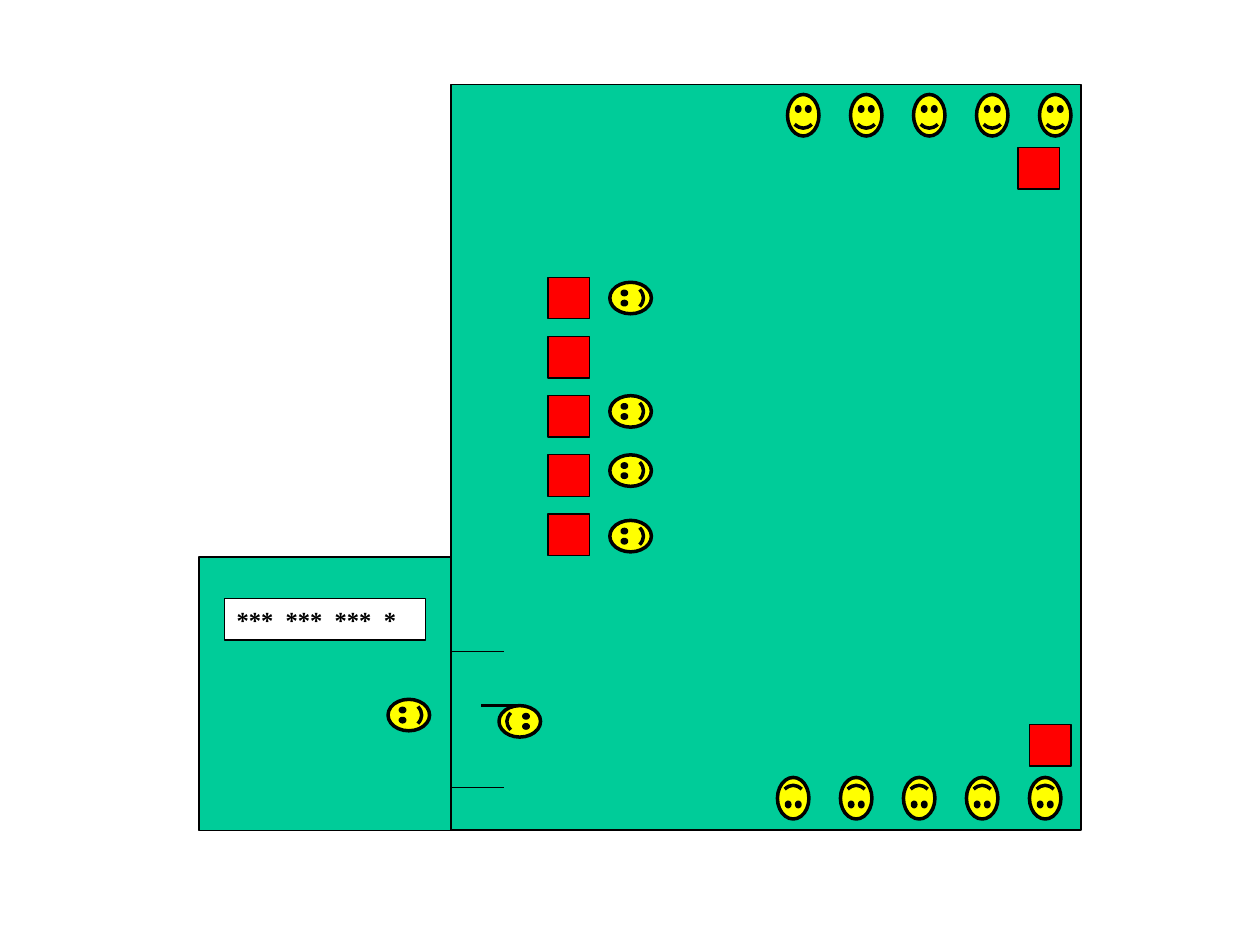
from pptx import Presentation
from pptx.dml.color import RGBColor
from pptx.enum.shapes import MSO_CONNECTOR, MSO_SHAPE
from pptx.enum.text import MSO_ANCHOR, PP_ALIGN
from pptx.oxml.ns import qn
from pptx.util import Inches, Pt
from lxml import etree

THEME = {
    "floor": "00CC99", "desk": "FF0000", "face": "FFFF00",
    "sign": "FFFFFF", "ink": "000000",
    "font": "Times New Roman", "sign_size": 14,
    "thin": 0.75, "wall": 1, "arm": 1.5, "bold": 2,
}

ROOMS = [(1.58, 4.42, 2, 2.17, THEME["thin"]), (3.58, 0.67, 5, 5.92, THEME["wall"])]
SIGN = ("***  ***  ***  *", (1.78, 4.75, 1.6, 0.33))
DESK_SIZE = (0.33, 0.33)
FACE_SIZE = (0.25, 0.33)
SMILE = 0.047

CORNER_DESKS = [(8.17, 5.75), (8.08, 1.17)]
DESK_COLUMN = {"left": 4.35, "top": 2.2, "step": 0.47, "count": 5}

QUEUES = [
    {"left": 6.17, "top": 6.17, "rotation": 180},
    {"left": 6.25, "top": 0.75, "rotation": 0},
]
QUEUE_STEP, QUEUE_COUNT = 0.5, 5
SEATED_LEFT, SEATED_TOPS = 4.88, [2.2, 3.1, 3.57, 4.09]
AT_DOOR = [(4, 5.56, 90), (3.12, 5.51, 270)]

DOOR_POSTS = [(3.58, y, 4, y) for y in (5.17, 6.25)]
ARM = (3.82, 5.6, 4.1, 5.6)


def colour(name):
    return RGBColor.from_string(THEME[name])


def add_block(slide, preset, box, fill, weight, rotation=0):
    block = slide.shapes.add_shape(preset, *map(Inches, box))
    block.shadow.inherit = False
    block.fill.solid()
    block.fill.fore_color.rgb = colour(fill)
    block.line.color.rgb = colour("ink")
    block.line.width = Pt(weight)
    block.rotation = rotation
    return block


def add_desk(slide, left, top):
    add_block(slide, MSO_SHAPE.RECTANGLE, (left, top, *DESK_SIZE), "desk", THEME["thin"])


def add_face(slide, left, top, rotation):
    face = add_block(slide, MSO_SHAPE.SMILEY_FACE, (left, top, *FACE_SIZE),
                     "face", THEME["bold"], rotation)
    face.adjustments[0] = SMILE


def add_stroke(slide, ends, weight):
    stroke = slide.shapes.add_connector(MSO_CONNECTOR.STRAIGHT, *map(Inches, ends))
    stroke.line.color.rgb = colour("ink")
    stroke.line.width = Pt(weight)
    etree.SubElement(stroke.element.spPr, qn("a:effectLst"))


def write(block, text, size, bold=False, align=PP_ALIGN.LEFT):
    frame = block.text_frame
    frame.word_wrap = True
    frame.vertical_anchor = MSO_ANCHOR.MIDDLE
    paragraph = frame.paragraphs[0]
    paragraph.alignment = align
    run = paragraph.add_run()
    run.text = text
    run.font.name = THEME["font"]
    run.font.size = Pt(size)
    run.font.bold = bold
    run.font.color.rgb = colour("ink")


def main():
    deck = Presentation()
    deck.slide_width, deck.slide_height = Inches(10), Inches(7.5)
    slide = deck.slides.add_slide(deck.slide_layouts[6])

    for *box, weight in ROOMS:
        add_block(slide, MSO_SHAPE.RECTANGLE, box, "floor", weight)

    for left, top in CORNER_DESKS:
        add_desk(slide, left, top)
    for row in range(DESK_COLUMN["count"]):
        add_desk(slide, DESK_COLUMN["left"], DESK_COLUMN["top"] + row * DESK_COLUMN["step"])

    for queue in QUEUES:
        for place in range(QUEUE_COUNT):
            add_face(slide, queue["left"] + place * QUEUE_STEP, queue["top"], queue["rotation"])
    for top in SEATED_TOPS:
        add_face(slide, SEATED_LEFT, top, 270)
    for left, top, rotation in AT_DOOR:
        add_face(slide, left, top, rotation)

    for post in DOOR_POSTS:
        add_stroke(slide, post, THEME["thin"])

    text, box = SIGN
    sign = add_block(slide, MSO_SHAPE.RECTANGLE, box, "sign", THEME["thin"])
    write(sign, text, THEME["sign_size"], bold=True)
    add_stroke(slide, ARM, THEME["arm"])

    deck.save("out.pptx")


if __name__ == "__main__":
    main()
